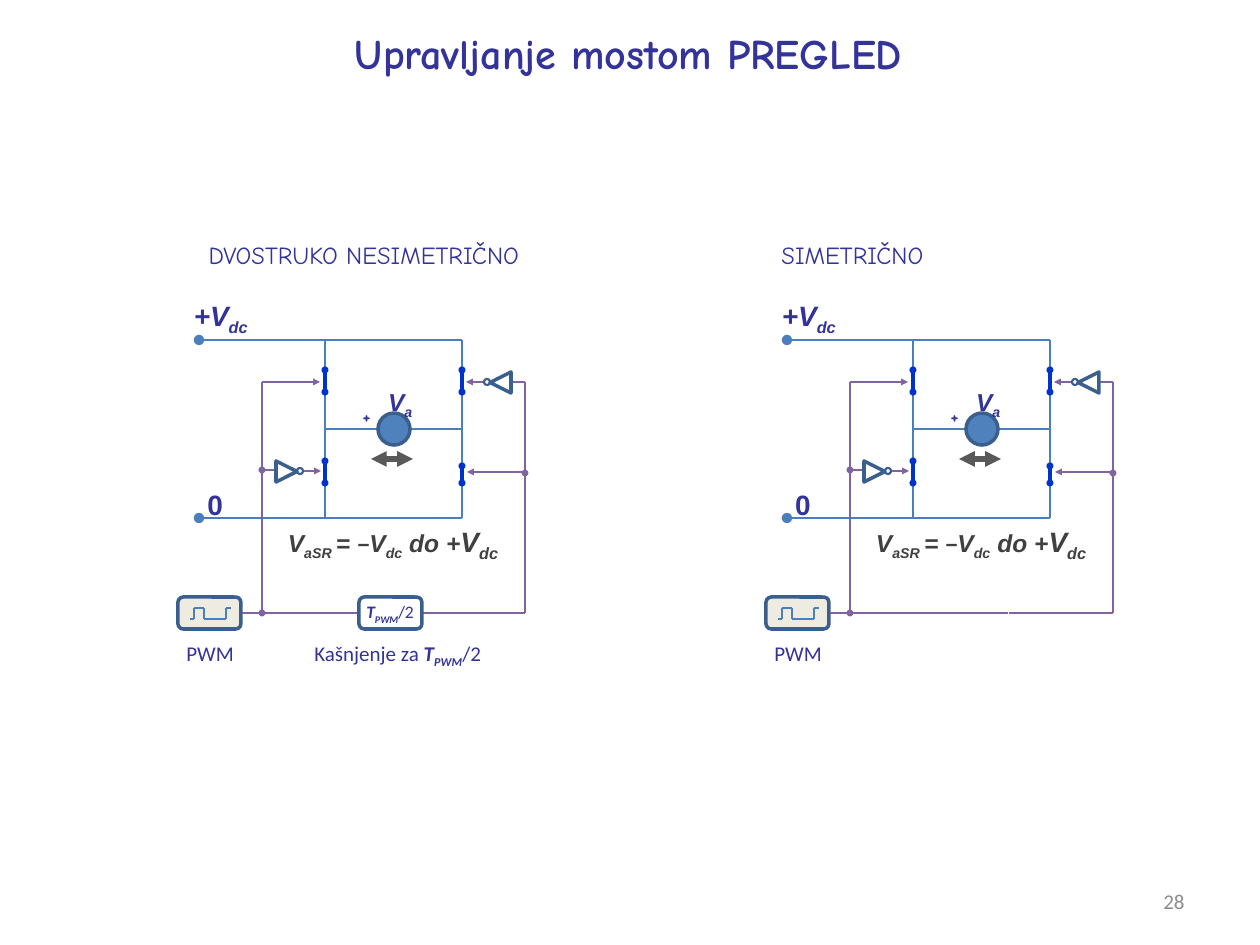
from dataclasses import dataclass
from itertools import pairwise
from typing import NamedTuple

from lxml.etree import SubElement
from pptx import Presentation
from pptx.dml.color import RGBColor
from pptx.enum.shapes import MSO_CONNECTOR as Connector, MSO_SHAPE as Preset
from pptx.enum.text import MSO_ANCHOR as Anchor, MSO_AUTO_SIZE as AutoSize, PP_ALIGN as Align
from pptx.oxml.ns import qn
from pptx.shapes.shapetree import GroupShapes
from pptx.text.text import TextFrame
from pptx.util import Emu, Pt


@dataclass(frozen=True)
class Theme:
    ink: str = "333399"
    formula: str = "404040"
    muted: str = "8C8C8C"
    wire: str = "4B7EBC"
    control: str = "8064A2"
    switch: str = "0033CC"
    rotation: str = "595959"
    outline: str = "3A5F8C"
    motor: str = "4F81BD"
    source: str = "EEECE1"
    heading_font: str = "Comic Neue"
    math_font: str = "Arial"
    body_font: str = "Calibri"
    title: int = 24
    large: int = 16
    medium: int = 14
    body: int = 12
    plus: int = 11
    small: int = 10
    thin: float = 0.75
    pulse: float = 1.25
    bold: float = 2
    thick: float = 3


THEME = Theme()


class Box(NamedTuple):
    left: int
    top: int
    width: int
    height: int


class Run(NamedTuple):
    text: str
    size: int
    bold: bool = False
    italic: bool = False
    subscript: bool = False


class Wire(NamedTuple):
    x1: int
    y1: int
    x2: int
    y2: int
    head: str = ""
    tail: str = ""


class Label(NamedTuple):
    box: Box
    runs: list[Run]
    font: str = THEME.math_font
    color: str = THEME.ink
    align: Align = Align.CENTER
    wrap: bool = False


def px(length: int) -> Emu:
    return Emu(round(length * 914400 / 126))


def symbol(text: str, size: int, subscript: bool = False) -> Run:
    return Run(text, size, True, True, subscript)


# Parts shared by both bridges, in the coordinates of the left one
POWER_WIRES = [
    Wire(325, 340, 325, 461), Wire(462, 340, 462, 466), Wire(325, 429, 462, 429),
    Wire(325, 486, 325, 518), Wire(462, 486, 462, 518),
]
SUPPLY_WIRES = [Wire(199, y, 462, y, head="oval") for y in (340, 518)]
SWITCHES = [Wire(x, top, x, bottom, "oval", "oval") for x, top, bottom in
            ((325, 370, 392), (462, 370, 392), (325, 461, 483), (462, 466, 483))]
CONTROL_WIRES = [
    Wire(525, 382, 525, 473), Wire(525, 472, 467, 472, tail="triangle"),
    Wire(525, 382, 512, 382), Wire(483, 382, 466, 382, tail="triangle"),
    Wire(304, 471, 321, 471, tail="triangle"), Wire(262, 382, 320, 382, tail="triangle"),
    Wire(242, 613, 262, 613, tail="oval"), Wire(262, 382, 262, 472),
    Wire(277, 470, 262, 470), Wire(262, 470, 262, 613, head="oval"),
    Wire(525, 613, 421, 613), Wire(525, 473, 525, 613, head="oval"),
]
PULSE = [(190, 619), (194, 619), (194, 608), (204, 608),
         (204, 619), (226, 619), (226, 608), (231, 608)]
LABELS = [
    Label(Box(179, 292, 88, 47),
          [symbol("+V", THEME.large), symbol("dc ", THEME.large, True)]),
    Label(Box(350, 398, 73, 52), [Run("+", THEME.plus, True)],
          THEME.heading_font, align=Align.LEFT, wrap=True),
    Label(Box(194, 481, 42, 47), [Run("0", THEME.large, True)]),
    Label(Box(374, 377, 57, 43), [symbol("V", THEME.medium), symbol("a", THEME.medium, True),
                                  symbol(" ", THEME.large, True)]),
    Label(Box(261, 518, 254, 47),
          [symbol("V", THEME.medium), symbol("aSR ", THEME.medium, True),
           symbol("= ", THEME.medium), symbol("−", THEME.body), symbol("V", THEME.medium),
           symbol("dc", THEME.medium, True), symbol(" do +", THEME.medium),
           symbol("V", THEME.large), symbol("dc ", THEME.large, True)],
          color=THEME.formula, align=Align.RIGHT),
    Label(Box(174, 634, 73, 38), [Run("PWM", THEME.body)], THEME.body_font, align=Align.LEFT),
]


def half_period(size: int) -> list[Run]:
    return [symbol("T", size), symbol("PWM", size, True), Run("/2", size)]


DELAY_LABELS = [
    Label(Box(354, 595, 77, 34), half_period(THEME.small), THEME.body_font, align=Align.LEFT),
    Label(Box(302, 634, 198, 38), [Run("Kašnjenje za ", THEME.body), *half_period(THEME.body)],
          THEME.body_font, align=Align.LEFT),
]


def fill_text(frame: TextFrame, label: Label, anchor: Anchor = Anchor.TOP) -> None:
    frame.word_wrap = label.wrap
    frame.auto_size = AutoSize.NONE if label.wrap else AutoSize.SHAPE_TO_FIT_TEXT
    frame.vertical_anchor = anchor
    paragraph = frame.paragraphs[0]
    paragraph.alignment = label.align
    for part in label.runs:
        run = paragraph.add_run()
        run.text = part.text
        run.font.name, run.font.size = label.font, Pt(part.size)
        run.font.bold, run.font.italic = part.bold, part.italic
        run.font.color.rgb = RGBColor.from_string(label.color)
        if part.subscript:
            run._r.get_or_add_rPr().set("baseline", "-25000")


def add_label(shapes: GroupShapes, label: Label, dx: int = 0, anchor: Anchor = Anchor.TOP) -> None:
    box = label.box._replace(left=label.box.left + dx)
    fill_text(shapes.add_textbox(*map(px, box)).text_frame, label, anchor)


def add_wire(shapes: GroupShapes, wire: Wire, dx: int, color: str, width: float,
             end_size: str = "sm") -> None:
    connector = shapes.add_connector(Connector.STRAIGHT, px(wire.x1 + dx), px(wire.y1),
                                     px(wire.x2 + dx), px(wire.y2))
    connector.line.color.rgb = RGBColor.from_string(color)
    connector.line.width = Pt(width)
    line = connector.line._get_or_add_ln()
    for tag, kind in (("a:headEnd", wire.head), ("a:tailEnd", wire.tail)):
        if kind:
            SubElement(line, qn(tag), type=kind, w=end_size, len=end_size)
    SubElement(connector._element.spPr, qn("a:effectLst"))


def add_outline(shapes: GroupShapes, preset: Preset, box: Box, dx: int, fill: str = "",
                width: float = THEME.bold, rotation: int = 0) -> None:
    shape = shapes.add_shape(preset, *map(px, box._replace(left=box.left + dx)))
    shape.shadow.inherit = False
    shape.rotation = rotation
    shape.line.color.rgb = RGBColor.from_string(THEME.outline)
    shape.line.width = Pt(width)
    if fill:
        shape.fill.solid()
        shape.fill.fore_color.rgb = RGBColor.from_string(fill)
    else:
        shape.fill.background()


def draw_bridge(shapes: GroupShapes, dx: int, heading: str, heading_box: Box, delayed: bool) -> None:
    # Power circuit, motor and switches
    for wire in SUPPLY_WIRES:
        add_wire(shapes, wire, dx, THEME.wire, THEME.thin, "med")
    for wire in POWER_WIRES:
        add_wire(shapes, wire, dx, THEME.wire, THEME.thin)
    add_outline(shapes, Preset.OVAL, Box(378, 413, 32, 32), dx, THEME.motor)
    add_wire(shapes, Wire(371, 459, 413, 459, "triangle", "triangle"), dx,
             THEME.rotation, THEME.thick, "med")
    for switch in SWITCHES:
        add_wire(shapes, switch, dx, THEME.switch, THEME.bold)

    # Pulse source
    add_outline(shapes, Preset.ROUNDED_RECTANGLE, Box(178, 597, 63, 32), dx, THEME.source)
    for start, end in pairwise(PULSE):
        add_wire(shapes, Wire(*start, *end), dx, THEME.wire, THEME.pulse)

    # Control wires and inverters
    for wire in [*CONTROL_WIRES, Wire(357 if delayed else 420, 613, 262, 613)]:
        add_wire(shapes, wire, dx, THEME.control, THEME.thin)
    for triangle, circle, rotation in ((Box(490, 372, 21, 21), Box(484, 379, 6, 6), 270),
                                       (Box(276, 461, 21, 21), Box(297, 468, 6, 6), 90)):
        add_outline(shapes, Preset.ISOSCELES_TRIANGLE, triangle, dx, rotation=rotation)
        add_outline(shapes, Preset.OVAL, circle, dx, width=THEME.pulse)
    if delayed:
        add_outline(shapes, Preset.ROUNDED_RECTANGLE, Box(359, 597, 63, 32), dx)

    # Labels
    add_label(shapes, Label(heading_box, [Run(heading, THEME.medium)], THEME.heading_font))
    for label in LABELS + (DELAY_LABELS if delayed else []):
        add_label(shapes, label, dx)


def main() -> None:
    presentation = Presentation()
    presentation.slide_width, presentation.slide_height = px(1260), px(945)
    slide = presentation.slides.add_slide(presentation.slide_layouts[5])

    # Title and page number
    title = slide.shapes.title
    title_label = Label(Box(312, 21, 633, 63), [Run("Upravljanje mostom PREGLED", THEME.title, True)],
                        THEME.heading_font)
    title.left, title.top, title.width, title.height = map(px, title_label.box)
    fill_text(title.text_frame, title_label)
    add_label(slide.shapes, Label(Box(903, 876, 294, 50), [Run("28", THEME.body)], THEME.body_font,
                                  THEME.muted, Align.RIGHT, True), anchor=Anchor.MIDDLE)

    # Two bridges side by side
    for dx, heading, box, delayed in (
            (0, "DVOSTRUKO NESIMETRIČNO", Box(168, 234, 392, 43), True),
            (588, "SIMETRIČNO", Box(756, 234, 193, 43), False)):
        draw_bridge(slide.shapes.add_group_shape().shapes, dx, heading, box, delayed)
    presentation.save("out.pptx")


if __name__ == "__main__":
    main()
